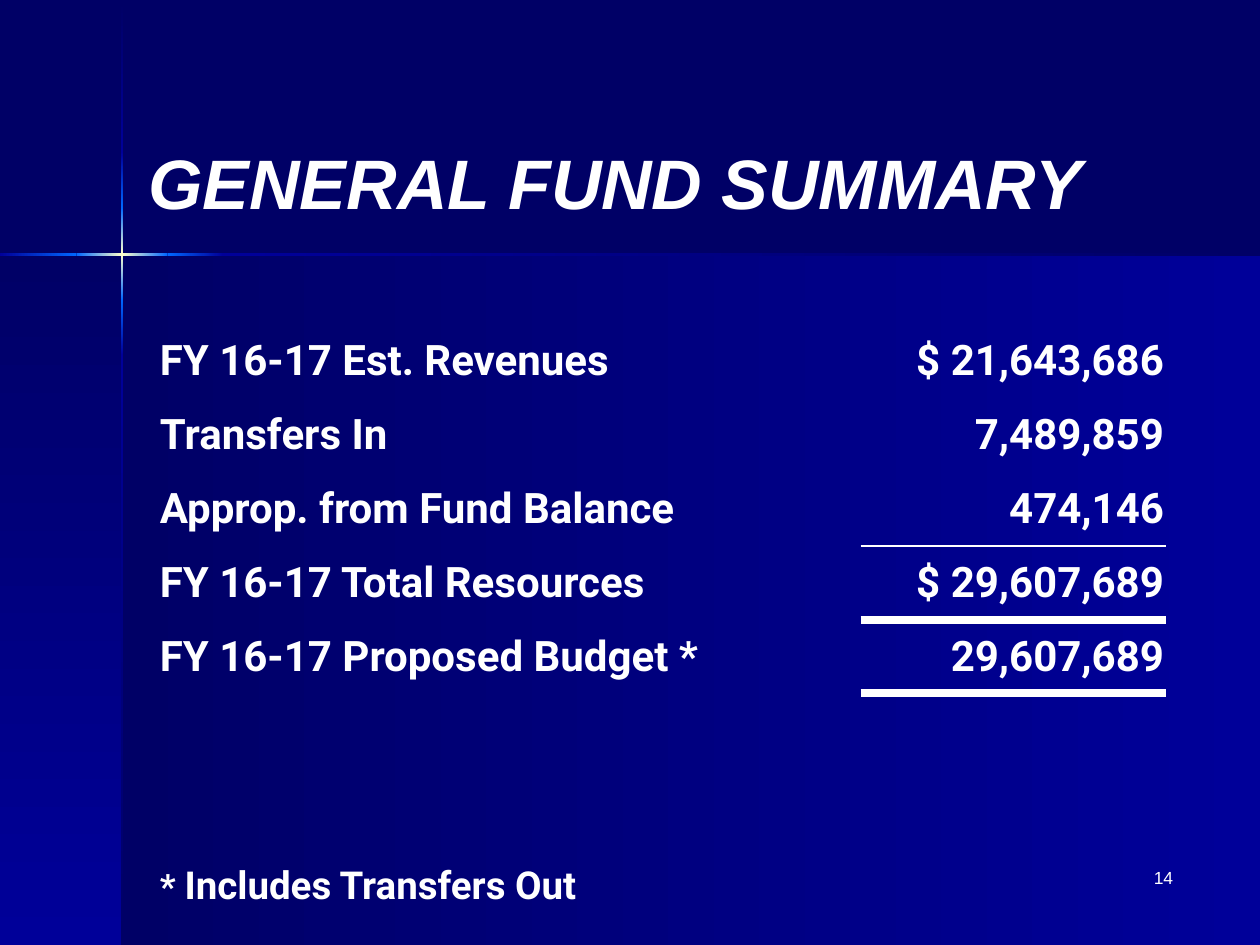
"""Build the General Fund summary slide."""
from dataclasses import dataclass
from itertools import pairwise

from lxml.etree import SubElement
from pptx import Presentation
from pptx.dml.color import RGBColor
from pptx.enum.shapes import MSO_CONNECTOR as Connector, MSO_SHAPE as Preset
from pptx.enum.text import MSO_ANCHOR as Anchor, MSO_AUTO_SIZE as AutoSize, PP_ALIGN as Align
from pptx.oxml.ns import qn
from pptx.util import Cm, Pt

WIDTH, HEIGHT = 25.4, 19.05
CROSS_X, CROSS_Y, RAY = 2.46, 5.13, 0.05
NAVY, ROYAL, AZURE, CREAM, WHITE = "000066", "000099", "0066FF", "FFFFCC", "FFFFFF"
RAY_COLORS = [(NAVY, ROYAL), (ROYAL, AZURE), (AZURE, CREAM, AZURE), (AZURE, ROYAL), (ROYAL, NAVY)]
RAY_ROWS = [0.03, 3.07, 4.19, 6.05, 7.16, HEIGHT]
RAY_COLUMNS = [0, 1.54, 3.38, 4.5, WIDTH]
NO_GRID_STYLE = "{2D5ABB26-0587-4C30-8999-92F81FD0307C}"


@dataclass
class Band:
    left: float
    top: float
    width: float
    height: float
    colors: tuple
    vertical: bool


@dataclass
class Rule:
    y: float
    weight: float


@dataclass
class Entry:
    label: str
    amount: str


ENTRIES = [
    Entry("FY 16-17 Est. Revenues", "$ 21,643,686"),
    Entry("Transfers In", "7,489,859"),
    Entry("Approp. from Fund Balance", "474,146"),
    Entry("FY 16-17 Total Resources", "$ 29,607,689"),
    Entry("FY 16-17 Proposed Budget *", "29,607,689"),
]
RULES = [Rule(11, 1), Rule(13.97, 4.5), Rule(12.5, 4.5)]


def color(value: str) -> RGBColor:
    """Turn a hex string into a colour."""
    return RGBColor.from_string(value)


def add_span(para, text: str, size: float, font: str, bold: bool = False, italic: bool = False) -> None:
    """Append one white run to a paragraph."""
    span = para.add_run()
    span.text = text
    span.font.size, span.font.name = Pt(size), font
    span.font.bold, span.font.italic = bold, italic
    span.font.color.rgb = color(WHITE)


def add_band(page, band: Band) -> None:
    """Draw a rectangle filled with an even gradient."""
    shape = page.shapes.add_shape(
        Preset.RECTANGLE, Cm(band.left), Cm(band.top), Cm(band.width), Cm(band.height))
    shape.shadow.inherit = False
    shape.line.fill.background()
    shape.fill.gradient()
    shape.fill.gradient_angle = 270 if band.vertical else 0
    stops = shape._element.spPr.find(qn("a:gradFill")).find(qn("a:gsLst"))
    for stop in list(stops):
        stops.remove(stop)
    for index, value in enumerate(band.colors):
        position = 100000 * index // (len(band.colors) - 1)
        stop = SubElement(stops, qn("a:gs"), pos=str(position))
        SubElement(stop, qn("a:srgbClr"), val=value)


def add_backdrop(page) -> None:
    """Draw the two panels and the crossing rays of light."""
    page.background.fill.solid()
    page.background.fill.fore_color.rgb = color(NAVY)
    depth = HEIGHT - CROSS_Y
    bands = [
        Band(CROSS_X, CROSS_Y, WIDTH - CROSS_X, depth, (NAVY, ROYAL), False),
        Band(0, CROSS_Y, CROSS_X, depth, (NAVY, ROYAL), True),
    ]
    for (start, end), colors in zip(pairwise(RAY_ROWS), RAY_COLORS):
        bands.append(Band(CROSS_X - RAY / 2, start, RAY, end - start, colors, True))
    for (start, end), colors in zip(pairwise(RAY_COLUMNS), RAY_COLORS[1:]):
        bands.append(Band(start, CROSS_Y - RAY / 2, end - start, RAY, colors, False))
    for band in bands:
        add_band(page, band)


def add_title(page, text: str) -> None:
    """Place and fill the title placeholder."""
    title = page.shapes.title
    title.left, title.top, title.width, title.height = Cm(2.74), Cm(1.9), Cm(20.96), Cm(2.74)
    frame = title.text_frame
    frame.auto_size, frame.vertical_anchor = AutoSize.NONE, Anchor.BOTTOM
    para = frame.paragraphs[0]
    para.alignment = Align.LEFT
    add_span(para, text, 40, "Arial", True, True)


def add_number(page, text: str) -> None:
    """Add the page number."""
    box = page.shapes.add_textbox(Cm(18.62), Cm(17.35), Cm(5.28), Cm(1.27))
    box.text_frame.word_wrap = True
    para = box.text_frame.paragraphs[0]
    para.alignment = Align.RIGHT
    add_span(para, text, 10, "Arial")


def fill_cell(cell, lines: list, align: Align) -> None:
    """Write lines of (text, size) runs into a cell."""
    for index, runs in enumerate(lines):
        para = cell.text_frame.add_paragraph() if index else cell.text_frame.paragraphs[0]
        para.alignment, para.line_spacing = align, 1.5
        for text, size in runs:
            add_span(para, text, size, "Roboto", True)


def add_summary(page) -> None:
    """Add the table of labels and amounts with its footnote."""
    widths, heights = (13.18, 7.57), (10.69, 2.01)
    frame = page.shapes.add_table(2, 2, Cm(2.97), Cm(6.15), Cm(sum(widths)), Cm(sum(heights)))
    table = frame.table
    table.first_row = table.horz_banding = False
    table._tbl.tblPr.find(qn("a:tableStyleId")).text = NO_GRID_STYLE
    for column, width in zip(table.columns, widths):
        column.width = Cm(width)
    for row, height in zip(table.rows, heights):
        row.height = Cm(height)
    for cell in table.iter_cells():
        cell.fill.background()
    fill_cell(table.cell(0, 0), [[(entry.label, 24)] for entry in ENTRIES], Align.LEFT)
    fill_cell(table.cell(0, 1), [[(entry.amount, 24)] for entry in ENTRIES], Align.RIGHT)
    fill_cell(table.cell(1, 0), [[("* ", 20), ("Includes Transfers Out", 22)]], Align.LEFT)


def add_rule(page, rule: Rule) -> None:
    """Draw a total line under the amounts."""
    line = page.shapes.add_connector(
        Connector.STRAIGHT, Cm(17.35), Cm(rule.y), Cm(23.5), Cm(rule.y))
    line.line.color.rgb = color(WHITE)
    line.line.width = Pt(rule.weight)
    SubElement(line._element.spPr, qn("a:effectLst"))


def main() -> None:
    """Build and save the deck."""
    deck = Presentation()
    deck.slide_width, deck.slide_height = Cm(WIDTH), Cm(HEIGHT)
    page = deck.slides.add_slide(deck.slide_layouts[5])
    add_backdrop(page)
    add_number(page, "14")
    add_summary(page)
    add_title(page, "GENERAL FUND SUMMARY")
    for rule in RULES:
        add_rule(page, rule)
    deck.save("out.pptx")


if __name__ == "__main__":
    main()
